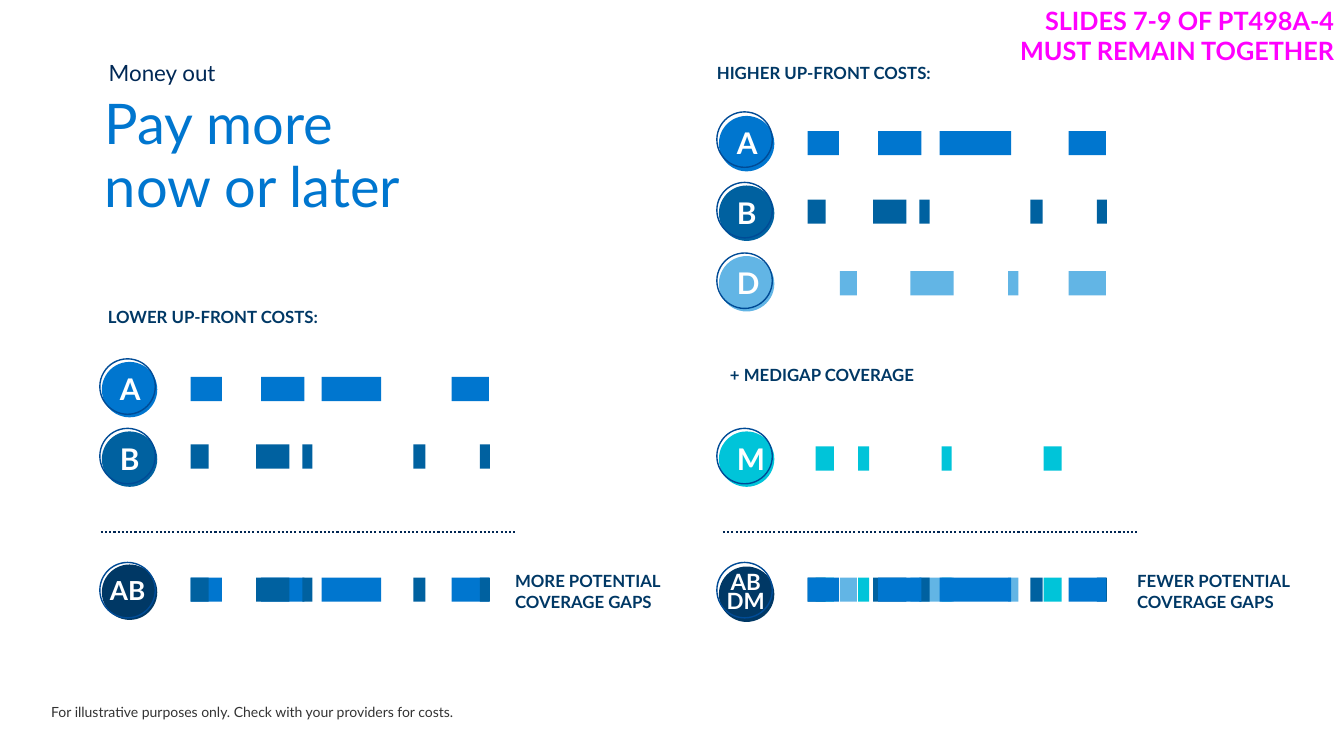
from typing import NamedTuple

from lxml import etree
from pptx import Presentation
from pptx.dml.color import RGBColor
from pptx.enum.dml import MSO_LINE
from pptx.enum.shapes import MSO_CONNECTOR, MSO_SHAPE
from pptx.enum.text import MSO_ANCHOR, MSO_AUTO_SIZE, PP_ALIGN
from pptx.oxml.ns import qn
from pptx.util import Inches, Pt

RECT, OVAL = MSO_SHAPE.RECTANGLE, MSO_SHAPE.OVAL
STRAIGHT, DOTS = MSO_CONNECTOR.STRAIGHT, MSO_LINE.ROUND_DOT
LEFT, MID, RIGHT = PP_ALIGN.LEFT, PP_ALIGN.CENTER, PP_ALIGN.RIGHT
TOP, FIXED = MSO_ANCHOR.TOP, MSO_AUTO_SIZE.NONE

FONT = "Lato"
HEX = {
    "A": "0076CF", "B": "0061A0", "D": "62B5E5", "M": "00C4D9",
    "navy": "003865", "ring": "004B96", "dots": "012754",
    "ink": "002855", "grey": "333333", "pink": "FF00FF", "white": "FFFFFF",
}

# Costs of each plan as (offset, width) along the time line
COSTS = {
    "A": [(0, 0.31), (0.7, 0.43), (1.3, 0.59), (2.59, 0.37)],
    "A+": [(0, 0.31), (0.7, 0.43), (1.31, 0.71), (2.59, 0.37)],
    "B": [(0, 0.18), (0.65, 0.33), (1.11, 0.1), (2.21, 0.12), (2.87, 0.1)],
    "D": [(0.32, 0.17), (1.02, 0.43), (1.99, 0.1), (2.59, 0.37)],
    "M": [(0.08, 0.18), (0.5, 0.11), (1.33, 0.1), (2.34, 0.18)],
}
BAR = 0.24
DISC = 0.55
SUM = 5.73


class Note(NamedTuple):
    text: str
    x: float
    y: float
    w: float
    h: float
    size: float
    tint: str
    bold: bool = True
    align: PP_ALIGN = LEFT
    lead: float | Pt | None = None
    inset: float = 0.1
    pad: float = 0


class Disc(NamedTuple):
    text: str
    x: float
    y: float
    lift: float = 0.03


class Row(NamedTuple):
    plan: str
    x: float
    y: float


LEAD = Pt(15)
NOTES = [
    Note("For illustrative purposes only. Check with your providers for costs.",
         0.41, 6.93, 6.56, 0.27, 10, "grey", False),
    Note("Money out", 0.98, 0.54, 3.18, 0.58, 16, "ink", False),
    Note("MORE POTENTIAL COVERAGE GAPS", 4.96, 5.6, 1.92, 0.52, 12, "navy",
         lead=LEAD, pad=0.05),
    Note("FEWER POTENTIAL COVERAGE GAPS", 11.13, 5.6, 1.8, 0.52, 12, "navy",
         lead=LEAD, pad=0.05),
    Note("LOWER UP-FRONT COSTS:", 1.02, 2.97, 2.67, 0.31, 12, "navy",
         lead=1.1, inset=0, pad=0.05),
    Note("HIGHER UP-FRONT COSTS:", 7.06, 0.55, 2.49, 0.31, 12, "navy",
         lead=1.1, inset=0, pad=0.05),
    Note("+ MEDIGAP COVERAGE", 7.19, 3.55, 2.08, 0.31, 12, "navy",
         lead=1.1, inset=0, pad=0.05),
    Note("SLIDES 7-9 OF PT498A-4 MUST REMAIN TOGETHER",
         9.78, 0, 3.55, 0.71, 18, "pink", align=RIGHT),
]
DISCS = [
    Disc("A", 1.01, 3.59), Disc("B", 1.01, 4.28), Disc("AB", 1.01, 5.6, 0.02),
    Disc("A", 7.13, 1.15, 0.04), Disc("B", 7.13, 1.84), Disc("D", 7.13, 2.54),
    Disc("M", 7.13, 4.28), Disc("ABDM", 7.13, 5.62, 0.04),
]
# Letter boxes by disc text: (text, dx, dy, width, height, size)
MARKS = {
    "AB": [("AB", -0.09, 0.05, 0.69, 0.42, 18.7)],
    "ABDM": [("AB", -0.08, -0.03, 0.69, 0.37, 16),
             ("DM", -0.08, 0.16, 0.69, 0.37, 16)],
}
NEAR, FAR = 1.89, 8.01
ROWS = [
    Row("A", NEAR, 3.74), Row("B", NEAR, 4.41),
    Row("A+", FAR, 1.3), Row("B", FAR, 1.98),
    Row("D", FAR, 2.69), Row("M", FAR, 4.43),
    # Combined rows, back to front
    Row("A", NEAR, SUM), Row("B", NEAR, SUM),
    Row("M", FAR, SUM), Row("D", FAR, SUM),
    Row("B", FAR, SUM), Row("A+", FAR, SUM),
]


def tint(name: str) -> RGBColor:
    return RGBColor.from_string(HEX[name])


def add_run(par, text: str, size: float, name: str, bold: bool) -> None:
    run = par.add_run()
    run.text = text
    run.font.name = FONT
    run.font.size = Pt(size)
    run.font.bold = bold
    run.font.color.rgb = tint(name)


def add_note(slide, note: Note) -> None:
    box = slide.shapes.add_textbox(*map(Inches, note[1:5]))
    frame = box.text_frame
    frame.word_wrap = True
    frame.margin_left = Inches(note.inset)
    par = frame.paragraphs[0]
    par.alignment = note.align
    if note.lead:
        par.line_spacing = note.lead
        par.space_after = Pt(4)
    if note.pad:
        props = par._p.get_or_add_pPr()
        props.set("marL", str(Inches(note.pad)))
        props.set("indent", "0")
    add_run(par, note.text, note.size, note.tint, note.bold)


def add_form(slide, kind, x: float, y: float, w: float, h: float,
             fill: str = "", line: str = "") -> None:
    form = slide.shapes.add_shape(kind, *map(Inches, (x, y, w, h)))
    form.shadow.inherit = False
    if fill:
        form.fill.solid()
        form.fill.fore_color.rgb = tint(fill)
    else:
        form.fill.background()
    if line:
        form.line.color.rgb = tint(line)
        form.line.width = Pt(1)
    else:
        form.line.fill.background()


def add_disc(slide, disc: Disc) -> None:
    fill = disc.text if disc.text in HEX else "navy"
    add_form(slide, OVAL, disc.x, disc.y, DISC, DISC, fill=fill)
    letter = [(disc.text, 0.08, 0.04, 0.37, 0.46, 21.3)]
    for text, dx, dy, w, h, size in MARKS.get(disc.text, letter):
        add_note(slide, Note(text, disc.x + dx, disc.y + dy, w, h, size,
                             "white", align=MID))
    add_form(slide, OVAL, disc.x - 0.02, disc.y - disc.lift, DISC, DISC,
             line="ring")


def add_row(slide, row: Row) -> None:
    bars = COSTS[row.plan]
    if row.plan == "D" and row.y == SUM:
        bars = bars[:-1]
    for start, width in bars:
        add_form(slide, RECT, row.x + start, row.y, width, BAR,
                 fill=row.plan[0])


def add_rule(slide, x: float) -> None:
    rule = slide.shapes.add_connector(
        STRAIGHT, *map(Inches, (x, 5.28, x + 4.13, 5.28)))
    rule.line.color.rgb = tint("dots")
    rule.line.width = Pt(1.5)
    rule.line.dash_style = DOTS
    etree.SubElement(rule._element.spPr, qn("a:effectLst"))


def add_title(slide) -> None:
    title = slide.shapes.title
    title.left, title.top = Inches(0.94), Inches(0.87)
    title.width, title.height = Inches(3.62), Inches(0.78)
    frame = title.text_frame
    frame.auto_size = FIXED
    frame.word_wrap = True
    frame.vertical_anchor = TOP
    par = frame.paragraphs[0]
    par.alignment = LEFT
    par.line_spacing = Pt(45)
    add_run(par, "Pay more", 40, "A", False)
    par.add_line_break()
    add_run(par, "now or later", 40, "A", False)


def main() -> None:
    deck = Presentation()
    deck.slide_width, deck.slide_height = Inches(13.33), Inches(7.5)
    slide = deck.slides.add_slide(deck.slide_layouts[5])

    # Title and labels
    add_title(slide)
    for note in NOTES:
        add_note(slide, note)

    # Dotted rules above the combined rows
    for x in (1, 7.17):
        add_rule(slide, x)

    # Lettered discs and cost bars
    for disc in DISCS:
        add_disc(slide, disc)
    for row in ROWS:
        add_row(slide, row)

    deck.save("out.pptx")


if __name__ == "__main__":
    main()
